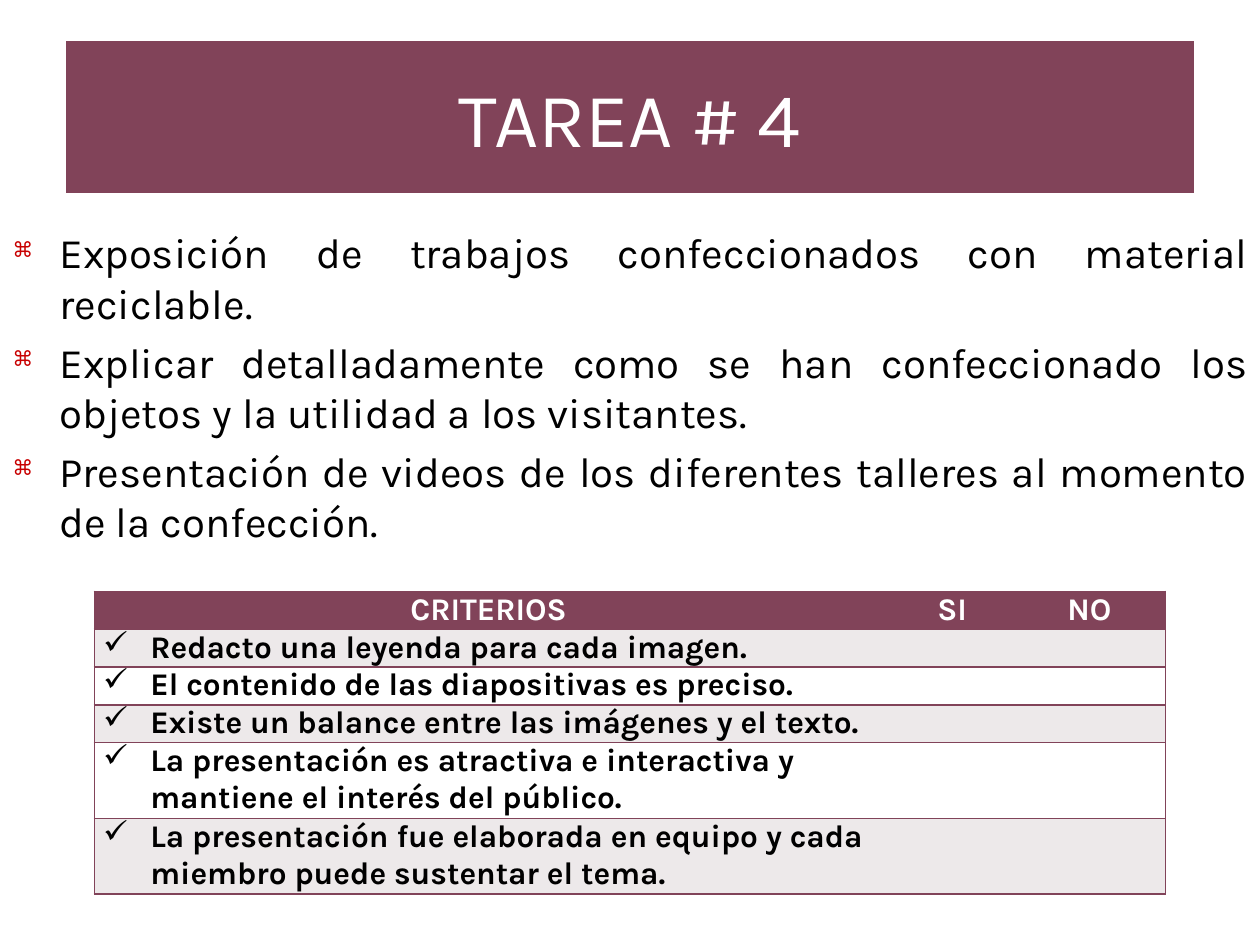
from dataclasses import dataclass
from typing import Optional

from lxml.etree import SubElement
from pptx import Presentation
from pptx.dml.color import RGBColor
from pptx.enum.shapes import MSO_SHAPE as Preset
from pptx.enum.text import MSO_ANCHOR as Anchor, PP_ALIGN as Align
from pptx.oxml.ns import qn
from pptx.util import Cm, Pt

FONT = "Karla"
PLUM, MIST, WHITE, BLACK, RED = "814359", "EDE9EA", "FFFFFF", "000000", "C80000"
HANGING = Cm(0.95)


@dataclass(frozen=True)
class Style:
    size: float
    color: str
    bold: bool = False
    align: Align = Align.LEFT
    before: float = 0
    after: float = 0


@dataclass(frozen=True)
class Bullet:
    char: str
    color: Optional[str] = None
    percent: int = 100


@dataclass(frozen=True)
class Criterion:
    text: str
    lines: int = 1
    align: Align = Align.LEFT


TITLE = Style(44, WHITE, align=Align.CENTER)
TASK = Style(24, BLACK, align=Align.JUSTIFY, before=4.8)
HEADING = Style(18, WHITE, True, Align.CENTER, 1, 1)
TASK_BULLET = Bullet("⌘", RED, 50)
CHECK = Bullet("✓")

TASKS = [
    "Exposición de trabajos confeccionados con material reciclable.",
    "Explicar detalladamente como se han confeccionado los objetos y la utilidad a los visitantes.",
    "Presentación de videos de los diferentes talleres al momento de la confección.",
]
HEADINGS = ["CRITERIOS", "SI", "NO "]
CRITERIA = [
    Criterion("Redacto una leyenda para cada imagen.", align=Align.JUSTIFY),
    Criterion("El contenido de las diapositivas es preciso."),
    Criterion("Existe un balance entre las imágenes y el texto."),
    Criterion("La presentación es atractiva e interactiva y mantiene el interés del público.", 2),
    Criterion("La presentación fue elaborada en equipo y cada miembro puede sustentar el tema.", 2),
]
COLUMN_WIDTHS = [Cm(15.9), Cm(2.79), Cm(2.9)]
LINE_HEIGHT = Cm(0.74)


def rgb(color: str) -> RGBColor:
    return RGBColor.from_string(color)


def style_paragraph(paragraph, style: Style) -> None:
    paragraph.alignment = style.align
    paragraph.space_before = Pt(style.before)
    paragraph.space_after = Pt(style.after)
    for run in paragraph.runs:
        run.font.name = FONT
        run.font.size = Pt(style.size)
        run.font.bold = style.bold
        run.font.color.rgb = rgb(style.color)


def add_bullet(paragraph, bullet: Bullet) -> None:
    properties = paragraph._p.get_or_add_pPr()
    properties.set("marL", str(HANGING))
    properties.set("indent", str(-HANGING))
    if bullet.color:
        color = SubElement(properties, qn("a:buClr"))
        SubElement(color, qn("a:srgbClr"), val=bullet.color)
    SubElement(properties, qn("a:buSzPct"), val=str(bullet.percent * 1000))
    SubElement(properties, qn("a:buChar"), char=bullet.char)


def add_border(cell, side: str, color: Optional[str]) -> None:
    line = SubElement(cell._tc.get_or_add_tcPr(), qn(f"a:ln{side}"), w=str(Pt(1)))
    if color:
        SubElement(SubElement(line, qn("a:solidFill")), qn("a:srgbClr"), val=color)
    else:
        SubElement(line, qn("a:noFill"))


def format_cell(cell, fill: str, column: int) -> None:
    cell.margin_left = cell.margin_right = Cm(0.18)
    cell.margin_top = cell.margin_bottom = 0
    add_border(cell, "L", PLUM if column == 0 else None)
    add_border(cell, "R", PLUM if column == len(HEADINGS) - 1 else None)
    add_border(cell, "T", PLUM)
    add_border(cell, "B", PLUM)
    cell.fill.solid()
    cell.fill.fore_color.rgb = rgb(fill)


def add_title(slide) -> None:
    banner = slide.shapes.add_shape(Preset.RECTANGLE, Cm(1.27), Cm(0.77), Cm(22.86), Cm(3.17))
    banner.shadow.inherit = False
    banner.fill.solid()
    banner.fill.fore_color.rgb = rgb(PLUM)
    banner.line.color.rgb = rgb(WHITE)
    banner.line.width = Pt(3.15)
    banner.text_frame.text = "TAREA # 4"
    banner.text_frame.vertical_anchor = Anchor.MIDDLE
    style_paragraph(banner.text_frame.paragraphs[0], TITLE)


def add_tasks(slide) -> None:
    body = slide.shapes.add_textbox(0, Cm(4.45), Cm(25.4), Cm(14.27)).text_frame
    body.word_wrap = True
    body.text = "\n".join(TASKS)
    for paragraph in body.paragraphs:
        style_paragraph(paragraph, TASK)
        add_bullet(paragraph, TASK_BULLET)


def add_checklist(slide) -> None:
    line_counts = [1] + [criterion.lines for criterion in CRITERIA]
    checklist = slide.shapes.add_table(
        len(line_counts), len(HEADINGS), Cm(1.9), Cm(11.92),
        sum(COLUMN_WIDTHS), LINE_HEIGHT * sum(line_counts),
    ).table
    for column, width in zip(checklist.columns, COLUMN_WIDTHS):
        column.width = width
    for row, lines in zip(checklist.rows, line_counts):
        row.height = LINE_HEIGHT * lines

    for column, heading in enumerate(HEADINGS):
        cell = checklist.cell(0, column)
        format_cell(cell, PLUM, column)
        cell.text_frame.text = heading
        style_paragraph(cell.text_frame.paragraphs[0], HEADING)

    for row, criterion in enumerate(CRITERIA, start=1):
        for column in range(len(HEADINGS)):
            cell = checklist.cell(row, column)
            format_cell(cell, MIST if row % 2 else WHITE, column)
            if column == 0:
                cell.text_frame.text = criterion.text
                paragraph = cell.text_frame.paragraphs[0]
                style_paragraph(paragraph, Style(18, BLACK, True, criterion.align, 1, 1))
                add_bullet(paragraph, CHECK)
            else:
                blank = cell.text_frame.paragraphs[0]
                blank._p.get_or_add_endParaRPr().set("sz", "1200")


def main() -> None:
    presentation = Presentation()
    presentation.slide_width, presentation.slide_height = Cm(25.4), Cm(19.05)
    slide = presentation.slides.add_slide(presentation.slide_layouts[6])
    add_title(slide)
    add_tasks(slide)
    add_checklist(slide)
    presentation.save("out.pptx")


if __name__ == "__main__":
    main()
